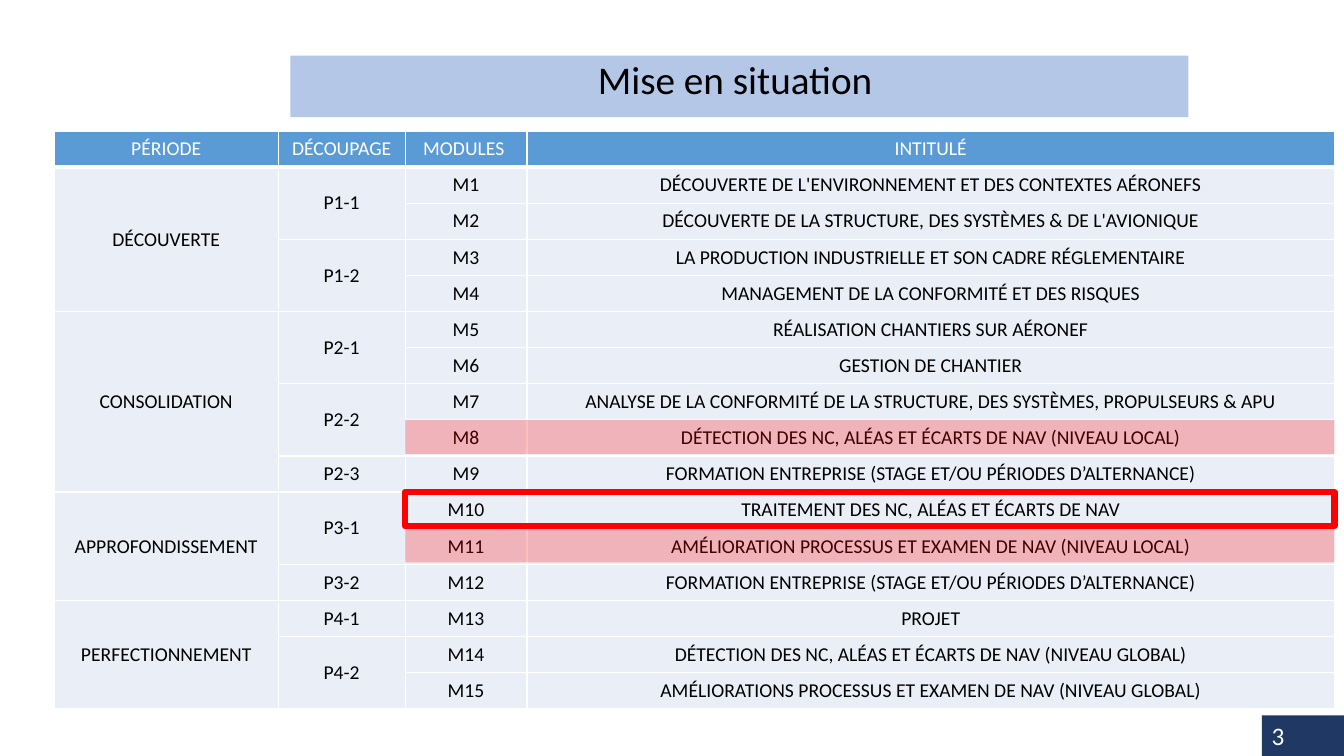
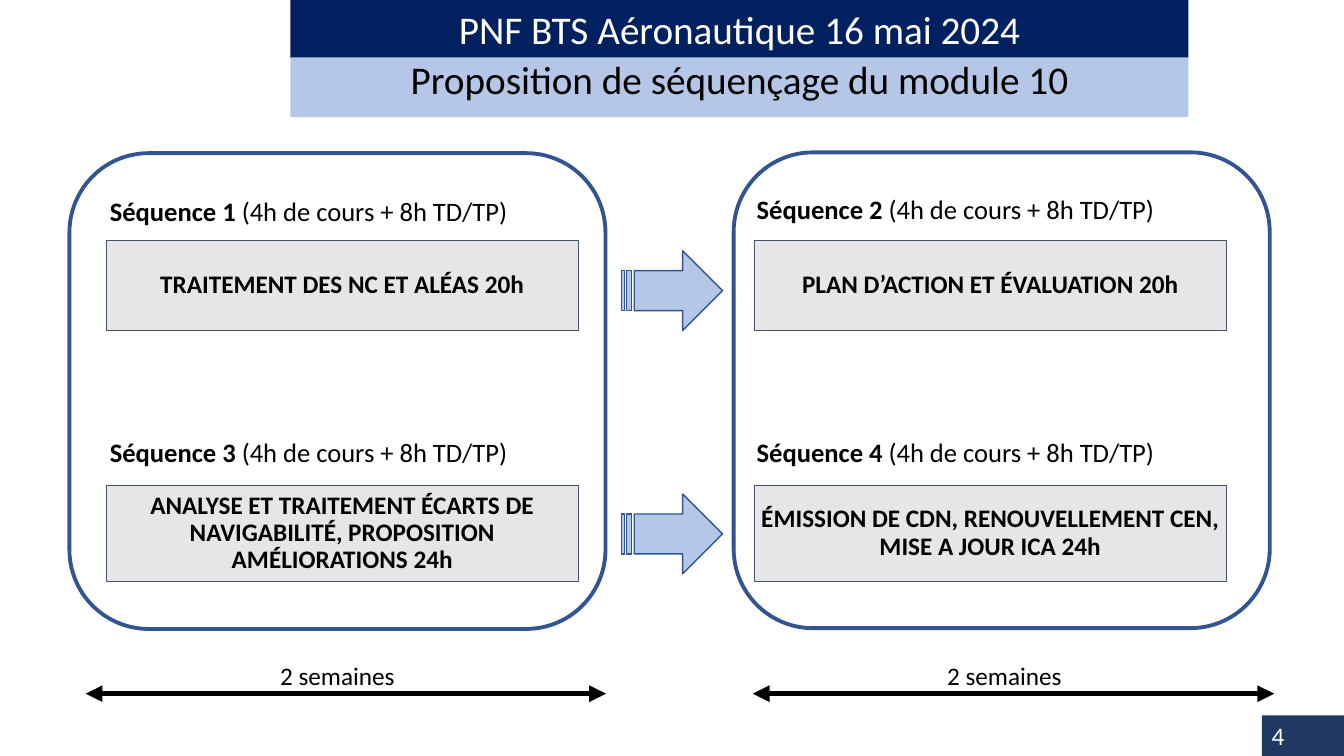
import pptx
import pptx.util
import pptx.dml.color
import pptx.enum.shapes
import pptx.enum.text
import pptx.oxml
import pptx.oxml.ns

Cm = pptx.util.Cm
Pt = pptx.util.Pt
KIND = pptx.enum.shapes.MSO_SHAPE
ALIGN = pptx.enum.text.PP_ALIGN
ANCHOR = pptx.enum.text.MSO_ANCHOR
NAMESPACE = pptx.oxml.ns.nsdecls("a")

COLORS = {
    "white": "FFFFFF", "black": "000000", "red": "FF0000",
    "navy": "002060", "page tag": "203864", "title band": "B4C7E7",
    "header": "5B9BD5", "cell": "EAEFF7", "outline": "325491",
    "card": "E7E6E6", "card line": "44546A",
}
CENTERED = {"alignment": ALIGN.CENTER}
TIGHT = {"alignment": ALIGN.LEFT, "line_spacing": 0.9}
TIGHT_CENTERED = {"alignment": ALIGN.CENTER, "line_spacing": 0.9}


def add_block(page, kind, box, fill=None, line=None, width=1):
    """Add a preset shape; box is left, top, width, height in cm."""
    block = page.shapes.add_shape(kind, *map(Cm, box))
    block.shadow.inherit = False
    if fill:
        block.fill.solid()
        block.fill.fore_color.rgb = pptx.dml.color.RGBColor.from_string(COLORS[fill])
    else:
        block.fill.background()
    if line:
        block.line.color.rgb = pptx.dml.color.RGBColor.from_string(COLORS[line])
        block.line.width = Pt(width)
    else:
        block.line.fill.background()
    return block


def write(frame, spans, size, color="black", para_format=CENTERED, frame_format={}):
    """Fill the first paragraph with (text, bold) spans."""
    for name, value in frame_format.items():
        setattr(frame, name, value)
    para = frame.paragraphs[0]
    for name, value in para_format.items():
        setattr(para, name, value)
    for text, bold in spans:
        span = para.add_run()
        span.text = text
        for name, value in {"name": "Calibri", "size": Pt(size), "bold": bold}.items():
            setattr(span.font, name, value)
        span.font.color.rgb = pptx.dml.color.RGBColor.from_string(COLORS[color])


deck = pptx.Presentation()
deck.slide_width, deck.slide_height = Cm(33.87), Cm(19.05)

# Shared parts: title band and page number
pages = []
titles = ["Mise en situation ", "Proposition de séquençage du module 10"]
for number, text in enumerate(titles, start=3):
    page = deck.slides.add_slide(deck.slide_layouts[5])
    title = page.shapes.title
    title_place = {"left": 7.32, "top": 1.4, "width": 22.63, "height": 1.55}
    for name, value in title_place.items():
        setattr(title, name, Cm(value))
    title.fill.solid()
    title.fill.fore_color.rgb = pptx.dml.color.RGBColor.from_string(COLORS["title band"])
    write(title.text_frame, [(text, False)], 28, para_format=TIGHT_CENTERED,
          frame_format={"vertical_anchor": ANCHOR.TOP, "word_wrap": True,
                        "auto_size": pptx.enum.text.MSO_AUTO_SIZE.NONE})
    tag = add_block(page, KIND.RECTANGLE, (31.8, 18.03, 2.07, 1.02), "page tag")
    write(tag.text_frame, [(str(number), False)], 18, "white", {"alignment": ALIGN.LEFT},
          {"vertical_anchor": ANCHOR.TOP})
    pages.append(page)
modules_page, sequence_page = pages

# Modules table: periods, their parts, and the modules of each part
HEADINGS = ["PÉRIODE", "DÉCOUPAGE", "MODULES ", "INTITULÉ"]
PERIODS = {
    "DÉCOUVERTE": {
        "P1-1": ["DÉCOUVERTE DE L'ENVIRONNEMENT ET DES CONTEXTES AÉRONEFS",
                 "DÉCOUVERTE DE LA STRUCTURE, DES SYSTÈMES & DE L'AVIONIQUE"],
        "P1-2": ["LA PRODUCTION INDUSTRIELLE ET SON CADRE RÉGLEMENTAIRE",
                 "MANAGEMENT DE LA CONFORMITÉ ET DES RISQUES"],
    },
    "CONSOLIDATION": {
        "P2-1": ["RÉALISATION CHANTIERS SUR AÉRONEF", "GESTION DE CHANTIER"],
        "P2-2": ["ANALYSE DE LA CONFORMITÉ DE LA STRUCTURE, DES SYSTÈMES, PROPULSEURS & APU",
                 "DÉTECTION DES NC, ALÉAS ET ÉCARTS DE NAV (NIVEAU LOCAL)"],
        "P2-3": ["FORMATION ENTREPRISE (STAGE ET/OU PÉRIODES D’ALTERNANCE)"],
    },
    "APPROFONDISSEMENT": {
        "P3-1": ["TRAITEMENT DES NC, ALÉAS ET ÉCARTS DE NAV",
                 "AMÉLIORATION PROCESSUS ET EXAMEN DE NAV (NIVEAU LOCAL)"],
        "P3-2": ["FORMATION ENTREPRISE (STAGE ET/OU PÉRIODES D’ALTERNANCE)"],
    },
    "PERFECTIONNEMENT": {
        "P4-1": ["PROJET"],
        "P4-2": ["DÉTECTION DES NC, ALÉAS ET ÉCARTS DE NAV (NIVEAU GLOBAL)",
                 "AMÉLIORATIONS PROCESSUS ET EXAMEN DE NAV (NIVEAU GLOBAL)"],
    },
}
COLUMN_WIDTHS = [5.64, 3.2, 3.07, 20.35]
TABLE_LEFT, TABLE_TOP, ROW_HEIGHT = 1.37, 3.3, 0.91

texts = {(0, column): heading for column, heading in enumerate(HEADINGS)}
merges = []
row = 1
for period, parts in PERIODS.items():
    period_row = row
    texts[row, 0] = period
    for part, modules in parts.items():
        texts[row, 1] = part
        merges.append((1, row, row + len(modules) - 1))
        for module in modules:
            texts[row, 2] = f"M{row}"
            texts[row, 3] = module
            row += 1
    merges.append((0, period_row, row - 1))

table = modules_page.shapes.add_table(
    row, len(HEADINGS), Cm(TABLE_LEFT), Cm(TABLE_TOP),
    Cm(sum(COLUMN_WIDTHS)), Cm(row * ROW_HEIGHT)).table
table.first_row = table.horz_banding = False
for column, width in zip(table.columns, COLUMN_WIDTHS):
    column.width = Cm(width)
for table_row in table.rows:
    table_row.height = Cm(ROW_HEIGHT)

for row_index in range(row):
    for column_index in range(len(HEADINGS)):
        cell = table.cell(row_index, column_index)
        is_header = row_index == 0
        cell.vertical_anchor = ANCHOR.MIDDLE
        cell.fill.solid()
        cell.fill.fore_color.rgb = pptx.dml.color.RGBColor.from_string(
            COLORS["header" if is_header else "cell"])
        # Borders come before the fill in the cell properties
        for position, side in enumerate("LRTB"):
            thick = (is_header and side == "B") or (row_index == 1 and side == "T")
            border = pptx.oxml.parse_xml(
                f'<a:ln{side} {NAMESPACE} w="{Pt(3 if thick else 1)}"><a:solidFill>'
                f'<a:srgbClr val="{COLORS["white"]}"/></a:solidFill></a:ln{side}>')
            cell._tc.get_or_add_tcPr().insert(position, border)
        if (row_index, column_index) in texts:
            write(cell.text_frame, [(texts[row_index, column_index], False)], 14,
                  "white" if is_header else "black")
for column, first, last in merges:
    if last > first:
        table.cell(first, column).merge(table.cell(last, column))

# Highlighted modules: a frame for M10, a veil for M8 and M11
for module, framed in [(10, True), (8, False), (11, False)]:
    box = (TABLE_LEFT + sum(COLUMN_WIDTHS[:2]), TABLE_TOP + module * ROW_HEIGHT,
           sum(COLUMN_WIDTHS[2:]), 0.86)
    if framed:
        add_block(modules_page, KIND.RECTANGLE, box, line="red", width=4.5)
    else:
        veil = add_block(modules_page, KIND.RECTANGLE, box, fill="red")
        veil_color = veil._element.spPr.find(".//" + pptx.oxml.ns.qn("a:srgbClr"))
        veil_color.append(pptx.oxml.parse_xml(f'<a:alpha {NAMESPACE} val="25000"/>'))

# Sequence cards, each with a label above: left, top, height, label left, label top
CARDS = [
    ("1", "TRAITEMENT DES NC ET ALÉAS 20h", 2.67, 6.07, 2.26, 2.57, 4.06),
    ("3", "ANALYSE ET TRAITEMENT ÉCARTS DE NAVIGABILITÉ, PROPOSITION AMÉLIORATIONS 24h",
     2.67, 12.22, 2.44, 2.57, 10.11),
    ("2", "PLAN D’ACTION ET ÉVALUATION 20h", 19, 6.07, 2.26, 18.87, 3.99),
    ("4", "ÉMISSION DE CDN, RENOUVELLEMENT CEN, MISE A JOUR ICA 24h",
     19, 12.22, 2.44, 18.87, 10.11),
]
MARGINS = ["margin_left", "margin_right", "margin_top", "margin_bottom"]
card_frame = dict.fromkeys(MARGINS, Cm(0.13)) | {
    "vertical_anchor": ANCHOR.MIDDLE, "word_wrap": True}
label_frame = dict.fromkeys(MARGINS, Cm(0.2)) | {
    "vertical_anchor": ANCHOR.BOTTOM, "word_wrap": True}
for number, text, left, top, height, label_left, label_top in CARDS:
    card = add_block(sequence_page, KIND.RECTANGLE, (left, top, 11.91, height),
                     "card", "card line", 0.5)
    write(card.text_frame, [(text, True)], 18, para_format=TIGHT_CENTERED,
          frame_format=card_frame)
    label = sequence_page.shapes.add_textbox(*map(Cm, (label_left, label_top, 12.7, 1.88)))
    write(label.text_frame, [(f"Séquence {number} ", True), ("(4h de cours + 8h TD/TP)", False)],
          19, para_format=TIGHT, frame_format=label_frame)

# Arrows between the columns
for top in (6.32, 12.45):
    add_block(sequence_page, KIND.STRIPED_RIGHT_ARROW, (15.67, top, 2.54, 2.01),
              "title band", "outline")

# Column outlines and their durations
for left, top, start, end, text_left in [(1.75, 3.86, 2.16, 15.27, 6.81),
                                         (18.49, 3.84, 18.97, 32.11, 23.62)]:
    add_block(sequence_page, KIND.ROUNDED_RECTANGLE, (left, top, 13.51, 11.99),
              line="outline", width=2.75)
    duration = sequence_page.shapes.add_connector(
        pptx.enum.shapes.MSO_CONNECTOR.STRAIGHT, *map(Cm, (start, 17.48, end, 17.48)))
    duration.line.color.rgb = pptx.dml.color.RGBColor.from_string(COLORS["black"])
    duration.line.width = Pt(4)
    for end_name in ("headEnd", "tailEnd"):
        duration.line._get_or_add_ln().append(
            pptx.oxml.parse_xml(f'<a:{end_name} {NAMESPACE} type="triangle"/>'))
    duration._element.spPr.append(pptx.oxml.parse_xml(f"<a:effectLst {NAMESPACE}/>"))
    weeks = sequence_page.shapes.add_textbox(*map(Cm, (text_left, 16.51, 3.43, 1.02)))
    write(weeks.text_frame, [("2 semaines", False)], 18,
          para_format={"alignment": ALIGN.LEFT}, frame_format={"word_wrap": False})

# Event band above the title
event = add_block(sequence_page, KIND.RECTANGLE, (7.32, 0, 22.63, 1.45), "navy")
write(event.text_frame, [("PNF BTS Aéronautique 16 mai 2024", False)], 28, "white",
      frame_format={"vertical_anchor": ANCHOR.TOP})

deck.save("out.pptx")
